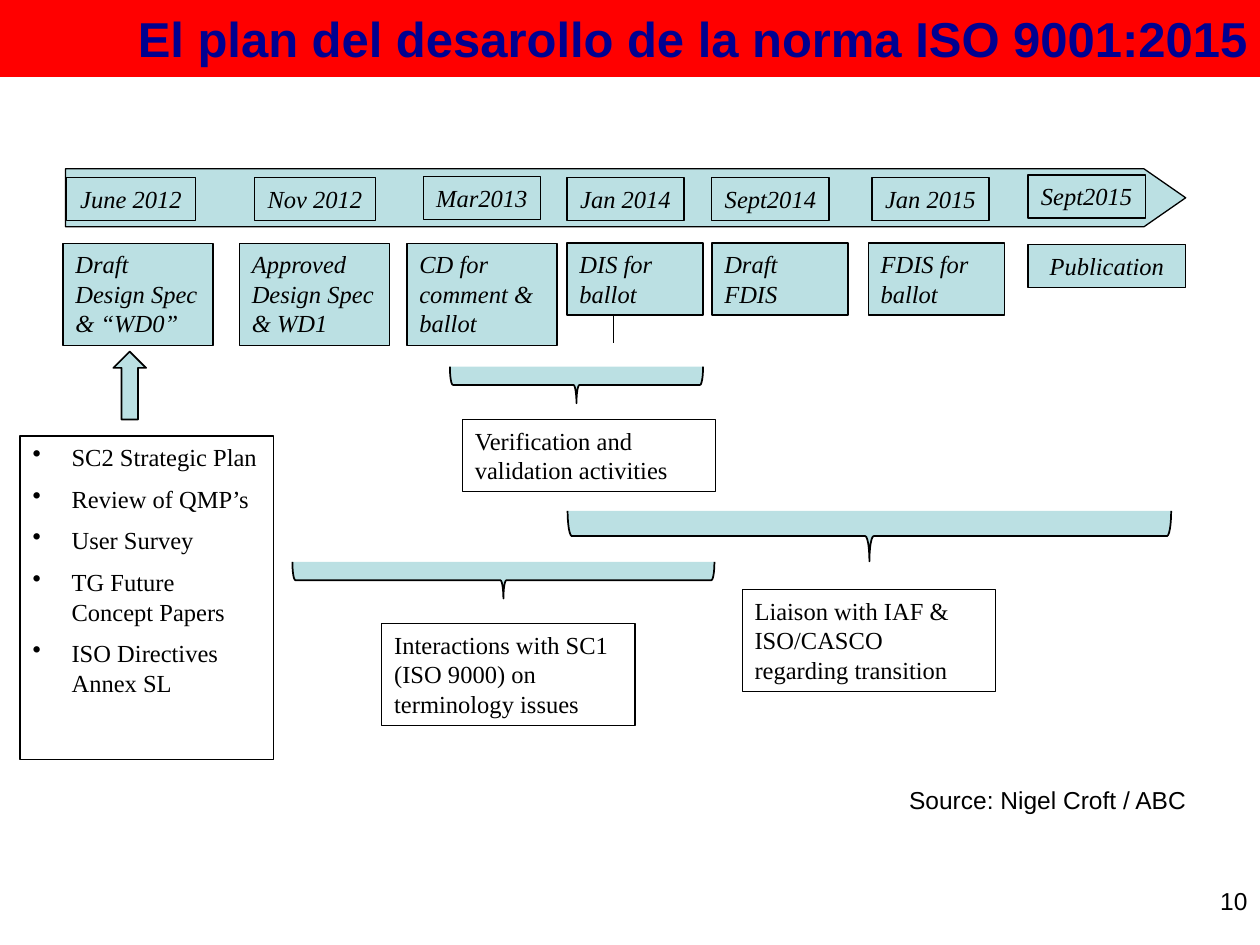
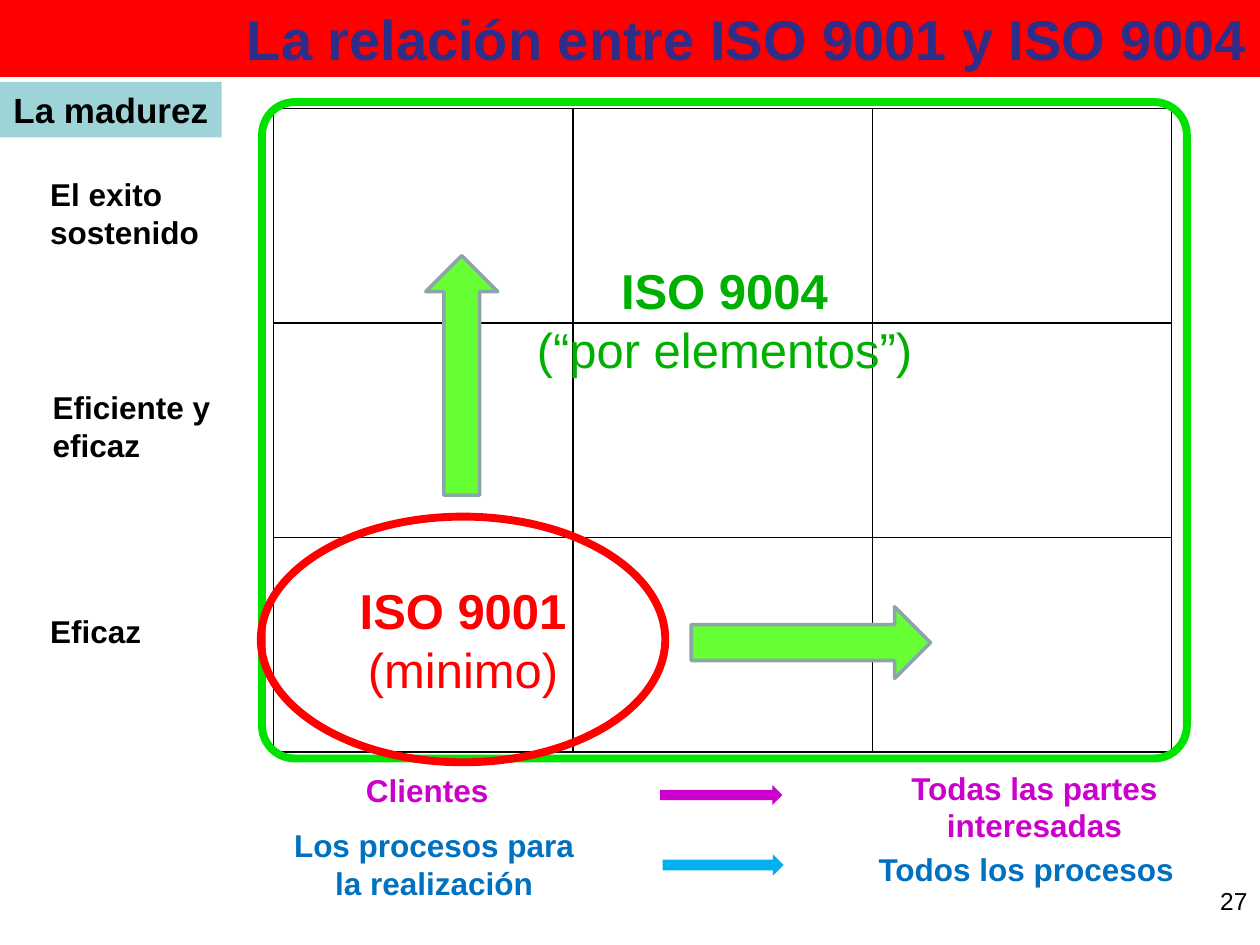
"""Build two slides on the ISO 9001:2015 plan and its relation to ISO 9004."""
from dataclasses import dataclass, replace
from typing import Any, Optional

from lxml import etree
from pptx import Presentation
from pptx import util as u
from pptx.dml.color import RGBColor
from pptx.enum import shapes, text
from pptx.oxml import ns

PX = 9144
BLACK = RGBColor(0x00, 0x00, 0x00)
WHITE = RGBColor(0xFF, 0xFF, 0xFF)
RED = RGBColor(0xFF, 0x00, 0x00)
NAVY = RGBColor(0x00, 0x00, 0x90)
INDIGO = RGBColor(0x2D, 0x2D, 0x8A)
PALE = RGBColor(0xBB, 0xE0, 0xE3)
TEAL = RGBColor(0x9E, 0xD3, 0xD7)
FRAME = RGBColor(0x00, 0xE2, 0x00)
GREEN = RGBColor(0x00, 0xB0, 0x00)
LIME = RGBColor(0x66, 0xFF, 0x33)
GREY = RGBColor(0x8A, 0xA6, 0xA8)
MAGENTA = RGBColor(0xCC, 0x00, 0xCC)
BLUE = RGBColor(0x00, 0x70, 0xC0)
SKY = RGBColor(0x00, 0xB0, 0xF0)

G = shapes.MSO_SHAPE
LEFT, CENTER, RIGHT = text.PP_ALIGN.LEFT, text.PP_ALIGN.CENTER, text.PP_ALIGN.RIGHT
TOP, MIDDLE = text.MSO_ANCHOR.TOP, text.MSO_ANCHOR.MIDDLE
At = tuple[int, int, int, int]


@dataclass(frozen=True)
class Style:
    """How a text looks and sits in its shape."""
    size: int = 14
    color: RGBColor = BLACK
    name: str = "Arial"
    bold: bool = False
    italic: bool = False
    align: Any = LEFT
    anchor: Any = TOP
    wrap: bool = True
    lead_only: bool = False
    bullets: bool = False
    bottom: int = 5


@dataclass(frozen=True)
class Item:
    """A preset shape with optional text."""
    at: At
    paras: tuple[str, ...] = ()
    style: Style = Style()
    kind: Any = G.RECTANGLE
    fill: Optional[RGBColor] = None
    line: Optional[RGBColor] = None
    width: float = 0.75
    rotation: int = 0
    adj: Optional[float] = None


NOTE = Style(name="Times New Roman")
STEP = replace(NOTE, italic=True)
DATE = replace(STEP, align=CENTER, wrap=False)
LABEL = Style(size=18, bold=True, wrap=False)
SCOPE = replace(LABEL, align=CENTER)
NORM = Style(size=28, bold=True, align=CENTER, anchor=MIDDLE, lead_only=True)

DATES = (
    ("June 2012", 53, 141, 102), ("Nov 2012", 202, 141, 96),
    ("Mar2013", 336, 140, 93), ("Jan 2014", 450, 141, 93),
    ("Sept2014", 565, 141, 93), ("Jan 2015", 692, 141, 93),
    ("Sept2015", 816, 139, 93),
)
STEPS = (
    ("Draft Design Spec & “WD0”", 50, 119, 81),
    ("Approved Design Spec & WD1", 190, 119, 81),
    ("CD for comment & ballot", 323, 119, 81),
    ("DIS for ballot", 450, 108, 57),
    ("Draft FDIS", 565, 108, 57),
    ("FDIS for ballot", 689, 108, 57),
)
BRACES = ((443, 205, 29, 201), (385, 293, 29, 335), (670, 186, 40, 479))
NOTES = (
    ("Verification and validation activities", 367, 333, 57),
    ("Interactions with SC1 (ISO 9000) on terminology issues", 303, 495, 81),
    ("Liaison with IAF & ISO/CASCO regarding transition", 589, 468, 81),
)
INPUTS = ("SC2 Strategic Plan", "Review of QMP’s", "User Survey",
          "TG Future Concept Papers", "ISO Directives Annex SL")
LEVELS = (
    ("El exito\nsostenido", (30, 134, 139, 71)),
    ("Eficiente y\neficaz", (32, 303, 153, 71)),
    ("Eficaz", (30, 481, 93, 40)),
)
SCOPES = (
    ("Clientes", (280, 607, 118, 40), MAGENTA),
    ("Todas las partes\ninteresadas", (712, 605, 218, 71), MAGENTA),
    ("Todos los procesos", (686, 670, 257, 40), BLUE),
    ("Los procesos para\nla realización", (222, 651, 245, 71), BLUE),
)


def emu(at: tuple[int, ...]) -> list[u.Emu]:
    """Turn px into EMU."""
    return [u.Emu(v * PX) for v in at]


def assign(obj: Any, values: dict[str, Any]) -> None:
    """Set each named attribute."""
    for key, value in values.items():
        setattr(obj, key, value)


def add_bullet(p: Any) -> None:
    """Give a paragraph a hanging bullet."""
    p.space_before = u.Pt(7)
    ppr = p._p.get_or_add_pPr()
    ppr.set("marL", str(31 * PX))
    ppr.set("indent", str(-31 * PX))
    etree.SubElement(ppr, ns.qn("a:buChar")).set("char", "•")


def write(tf: Any, paras: tuple[str, ...], style: Style) -> None:
    """Fill a text frame with styled paragraphs."""
    side, edge, bottom = emu((10, 5, style.bottom))
    assign(tf, {"auto_size": text.MSO_AUTO_SIZE.NONE, "word_wrap": style.wrap,
                "vertical_anchor": style.anchor, "margin_left": side,
                "margin_right": side, "margin_top": edge, "margin_bottom": bottom})
    for i, words in enumerate(paras):
        p = tf.add_paragraph() if i else tf.paragraphs[0]
        p.text = words
        p.alignment = style.align
        if style.bullets:
            add_bullet(p)
        for r in p.runs:
            assign(r.font, {"size": u.Pt(style.size), "name": style.name,
                            "bold": style.bold and not (style.lead_only and i),
                            "italic": style.italic})
            r.font.color.rgb = style.color


def draw(s: Any, item: Item) -> None:
    """Draw one shape."""
    sp = s.shapes.add_shape(item.kind, *emu(item.at))
    sp.shadow.inherit = False
    sp.rotation = item.rotation
    if item.adj is not None:
        sp.adjustments[0] = item.adj
    for part, color in ((sp.fill, item.fill), (sp.line.fill, item.line)):
        if color is None:
            part.background()
        else:
            part.solid()
            part.fore_color.rgb = color
    if item.line is not None:
        sp.line.width = u.Pt(item.width)
    if item.paras:
        write(sp.text_frame, item.paras, item.style)


def add_label(s: Any, words: str, at: At, style: Style) -> None:
    """Add a plain text box."""
    write(s.shapes.add_textbox(*emu(at)).text_frame, (words,), style)


def add_slide(prs: Any, title: str, size: int, color: RGBColor, number: int) -> Any:
    """Add a slide with its red title band and page number."""
    s = prs.slides.add_slide(prs.slide_layouts[5])
    sp = s.shapes.title
    assign(sp, dict(zip(("left", "top", "width", "height"), emu((0, 0, 1000, 61)))))
    sp.fill.solid()
    sp.fill.fore_color.rgb = RED
    write(sp.text_frame, (title,), Style(size, color, bold=True, align=RIGHT, anchor=MIDDLE))
    add_label(s, str(number), (767, 698, 233, 52), Style(align=RIGHT))
    return s


def add_line(s: Any, ends: At) -> None:
    """Draw a thin straight line."""
    cn = s.shapes.add_connector(shapes.MSO_CONNECTOR.STRAIGHT, *emu(ends))
    cn.line.color.rgb = BLACK
    cn.line.width = u.Pt(0.75)
    etree.SubElement(cn._element.spPr, ns.qn("a:effectLst"))


def add_grid(s: Any, at: At, n: int) -> None:
    """Add an empty square table with black borders."""
    table = s.shapes.add_table(n, n, *emu(at)).table
    assign(table, {"first_row": False, "horz_banding": False})
    for row in table.rows:
        row.height = u.Emu(at[3] * PX // n)
    for cell in table.iter_cells():
        tcpr = cell._tc.get_or_add_tcPr()
        for side in ("lnL", "lnR", "lnT", "lnB"):
            ln = etree.SubElement(tcpr, ns.qn(f"a:{side}"), w=str(u.Pt(1)))
            fill = etree.SubElement(ln, ns.qn("a:solidFill"))
            etree.SubElement(fill, ns.qn("a:srgbClr"), val=str(BLACK))
        cell.fill.background()


def build_plan(prs: Any) -> None:
    """Build the timeline slide."""
    s = add_slide(prs, "El plan del desarollo de la norma ISO 9001:2015", 28, NAVY, 10)
    pale = Item((52, 134, 889, 46), kind=G.PENTAGON, fill=PALE, line=BLACK, adj=0.72)
    draw(s, pale)
    box = replace(pale, kind=G.RECTANGLE, adj=None)
    add_line(s, (487, 247, 487, 272))
    for words, x, y, w in DATES:
        draw(s, replace(box, at=(x, y, w, 34), paras=(words,), style=DATE))
    for words, x, w, h in STEPS:
        draw(s, replace(box, at=(x, 193, w, h), paras=(words,), style=STEP))
    draw(s, replace(box, at=(816, 194, 125, 34), paras=("Publication",),
                    style=replace(STEP, align=CENTER)))
    draw(s, replace(box, at=(76, 293, 54, 26), kind=G.RIGHT_ARROW, rotation=270, width=1))
    for at in BRACES:
        draw(s, replace(box, at=at, kind=G.RIGHT_BRACE, rotation=90, width=1))
    note = replace(box, fill=WHITE, style=NOTE)
    for words, x, y, h in NOTES:
        draw(s, replace(note, at=(x, y, 201, h), paras=(words,)))
    draw(s, replace(note, at=(16, 346, 201, 257), paras=INPUTS,
                    style=replace(NOTE, bullets=True)))
    add_label(s, "Source: Nigel Croft / ABC", (663, 618, 337, 34), Style(align=CENTER))


def build_relation(prs: Any) -> None:
    """Build the maturity grid slide."""
    s = add_slide(prs, "La relación entre ISO 9001 y ISO 9004", 32, INDIGO, 27)
    add_grid(s, (217, 86, 713, 511), 3)
    arrow = Item((338, 203, 57, 190), kind=G.UP_ARROW, fill=LIME, line=GREY, width=2)
    for item in (
        Item((0, 65, 176, 44), ("La madurez",), replace(SCOPE, size=20), fill=TEAL),
        Item((208, 81, 734, 521), ("ISO 9004", "(“por elementos”)"),
             replace(NORM, color=GREEN, bottom=181), G.ROUNDED_RECTANGLE,
             line=FRAME, width=4.5, adj=0.05),
        arrow,
        replace(arrow, at=(615, 415, 57, 190), rotation=90),
        Item((207, 410, 321, 195), ("ISO 9001", "(minimo)"),
             replace(NORM, color=RED), G.OVAL, line=RED, width=4.5),
        Item((524, 623, 97, 16), kind=G.RIGHT_ARROW, fill=MAGENTA),
        Item((526, 678, 96, 17), kind=G.RIGHT_ARROW, fill=SKY),
    ):
        draw(s, item)
    for words, at in LEVELS:
        add_label(s, words, at, LABEL)
    for words, at, color in SCOPES:
        add_label(s, words, at, replace(SCOPE, color=color))


def main() -> None:
    """Build and save the presentation."""
    prs = Presentation()
    prs.slide_width, prs.slide_height = emu((1000, 750))
    build_plan(prs)
    build_relation(prs)
    prs.save("out.pptx")


if __name__ == "__main__":
    main()
